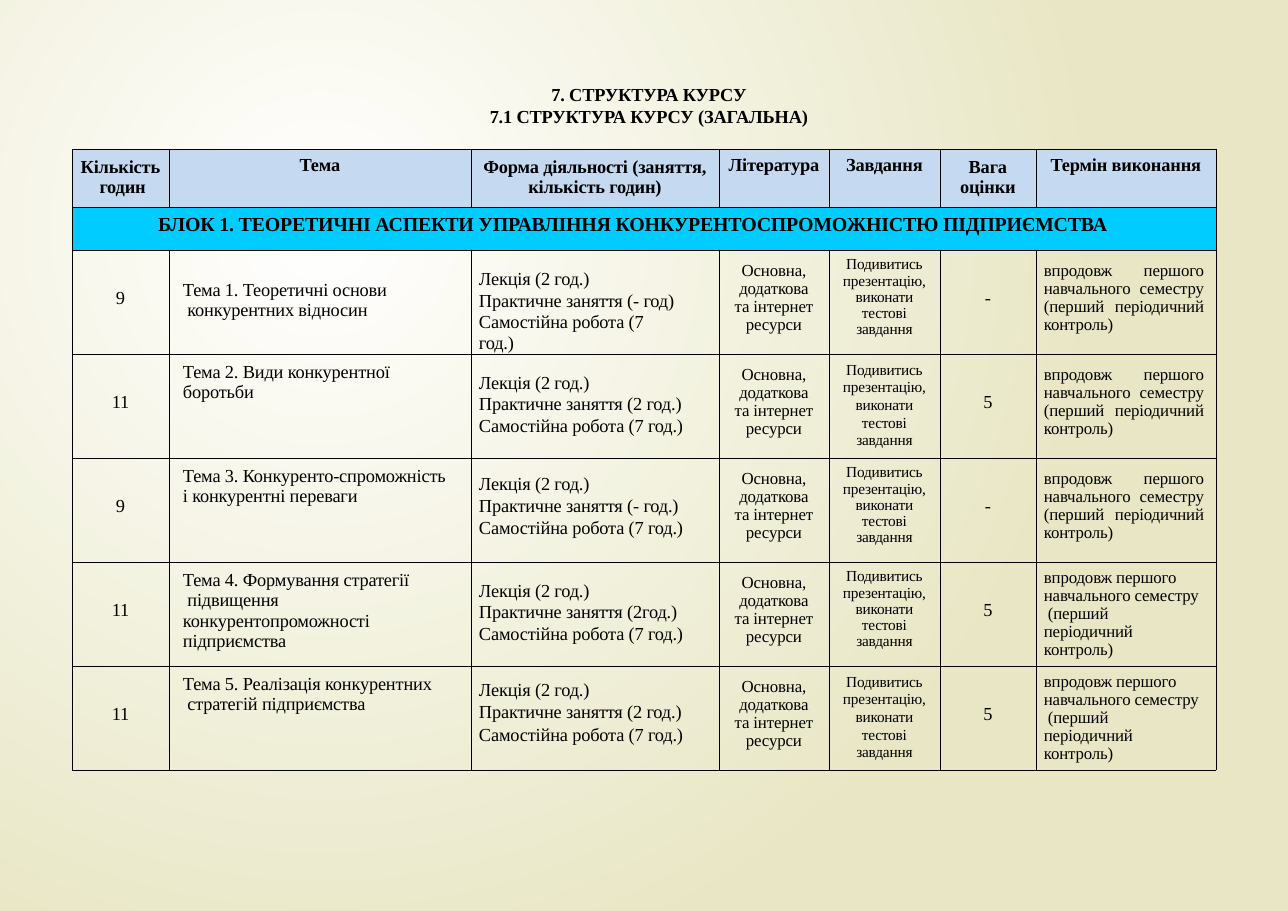
from dataclasses import dataclass

import lxml.etree
import pptx
import pptx.dml.color
import pptx.enum.text
import pptx.oxml.ns
import pptx.util

EMU_PER_PX = 8298
FONT = "Times New Roman"
BLACK, HEADER_BLUE, BLOCK_CYAN = "000000", "C5D9F0", "00CCFF"
TRACKING = -10  # hundredths of a point
LEFT = pptx.enum.text.PP_ALIGN.LEFT
CENTER = pptx.enum.text.PP_ALIGN.CENTER
JUSTIFY = pptx.enum.text.PP_ALIGN.JUSTIFY

COLUMN_WIDTHS = [97, 302, 248, 110, 111, 96, 180]
ROW_HEIGHTS = [58, 43] + [104] * 5


@dataclass(frozen=True)
class TextStyle:
    size: int = 12
    bold: bool = False
    align: pptx.enum.text.PP_ALIGN = CENTER
    line_points: float = 0
    line_factor: float = 1.0


@dataclass(frozen=True)
class CellText:
    text: str
    top: int
    style: TextStyle = TextStyle()
    left: int = 0
    right: int = 0
    fill: str = ""


@dataclass(frozen=True)
class Topic:
    hours: str
    title: str
    practice: str
    weight: str
    title_top: int = 8
    lecture_top: int = 18
    lecture_line: float = 14.1
    independent: str = "Самостійна робота (7 год.)"
    loose_task: bool = False
    justified_term: bool = True


HEADERS = [
    "Кількість\v годин",
    "Тема",
    "Форма діяльності (заняття,\vкількість годин)",
    "Література",
    "Завдання",
    "Вага\vоцінки",
    "Термін виконання",
]
BLOCK_TITLE = "БЛОК 1. ТЕОРЕТИЧНІ АСПЕКТИ УПРАВЛІННЯ КОНКУРЕНТОСПРОМОЖНІСТЮ ПІДПРИЄМСТВА"
LITERATURE = "Основна,\vдодаткова\vта інтернет\vресурси"
TASK = "Подивитись\vпрезентацію,\vвиконати\vтестові\vзавдання"
TERM_JUSTIFIED = "впродовж першого навчального семестру (перший періодичний контроль)"
TERM_LEFT = "впродовж першого\vнавчального семестру\v (перший\vперіодичний\vконтроль)"

TOPICS = [
    Topic("9", "Тема 1. Теоретичні основи\v конкурентних відносин", "(- год)", "-",
          title_top=30, lecture_top=19, lecture_line=13.8,
          independent="Самостійна робота (7\vгод.)"),
    Topic("11", "Тема 2. Види конкурентної\vборотьби", "(2 год.)", "5", loose_task=True),
    Topic("9", "Тема 3. Конкуренто-спроможність\vі конкурентні переваги", "(- год.)", "-",
          lecture_top=15, lecture_line=14.4),
    Topic("11", "Тема 4. Формування стратегії\v підвищення\vконкурентопроможності\vпідприємства",
          "(2год.)", "5", justified_term=False),
    Topic("11", "Тема 5. Реалізація конкурентних\v стратегій підприємства", "(2 год.)", "5",
          lecture_top=12, lecture_line=14.7, loose_task=True, justified_term=False),
]


def px(length: int) -> pptx.util.Emu:
    return pptx.util.Emu(length * EMU_PER_PX)


def colour(value: str) -> pptx.dml.color.RGBColor:
    return pptx.dml.color.RGBColor.from_string(value)


def write_text(text_frame, text: str, style: TextStyle) -> None:
    text_frame.word_wrap = True
    text_frame.text = text
    for paragraph in text_frame.paragraphs:
        paragraph.alignment = style.align
        paragraph.line_spacing = (
            pptx.util.Pt(style.line_points) if style.line_points else style.line_factor)
        font = paragraph.font
        font.name, font.size, font.bold = FONT, pptx.util.Pt(style.size), style.bold
        font.color.rgb = colour(BLACK)
        for properties in paragraph._p.iter(pptx.oxml.ns.qn("a:defRPr")):
            properties.set("spc", str(TRACKING))


def add_borders(cell) -> None:
    qn = pptx.oxml.ns.qn
    cell_properties = cell._tc.get_or_add_tcPr()
    for position, side in enumerate(("a:lnL", "a:lnR", "a:lnT", "a:lnB")):
        line = lxml.etree.Element(qn(side), {"w": str(pptx.util.Pt(0.5))})
        fill = lxml.etree.SubElement(line, qn("a:solidFill"))
        lxml.etree.SubElement(fill, qn("a:srgbClr"), {"val": BLACK})
        cell_properties.insert(position, line)


def fill_cell(cell, content: CellText) -> None:
    cell.margin_left, cell.margin_right = px(content.left), px(content.right)
    cell.margin_top, cell.margin_bottom = px(content.top), px(0)
    write_text(cell.text_frame, content.text, content.style)
    if content.fill:
        cell.fill.solid()
        cell.fill.fore_color.rgb = colour(content.fill)
    else:
        cell.fill.background()


def header_cells() -> list[CellText]:
    return [CellText(text, 8 if "\v" in text else 6, TextStyle(bold=True), fill=HEADER_BLUE)
            for text in HEADERS]


def topic_cells(topic: Topic) -> list[CellText]:
    activities = "\n".join(
        ["Лекція (2 год.)", f"Практичне заняття {topic.practice}", topic.independent])
    task_style = TextStyle(10, line_points=11.5) if topic.loose_task else TextStyle(
        10, line_factor=0.96)
    if topic.justified_term:
        term = CellText(TERM_JUSTIFIED, 12, TextStyle(11, align=JUSTIFY, line_factor=0.96), 8, 12)
    else:
        term = CellText(TERM_LEFT, 7, TextStyle(11, align=LEFT, line_factor=0.96), 8)
    return [
        CellText(topic.hours, 38),
        CellText(topic.title, topic.title_top, TextStyle(align=LEFT), 14),
        CellText(activities, topic.lecture_top,
                 TextStyle(align=LEFT, line_points=topic.lecture_line), 8),
        CellText(LITERATURE, 12, TextStyle(11, line_factor=0.96)),
        CellText(TASK, 7, task_style),
        CellText(topic.weight, 38),
        term,
    ]


def paint_background(slide) -> None:
    qn = pptx.oxml.ns.qn
    fill = slide.background.fill
    fill.gradient()
    for stop, position, value in zip(fill.gradient_stops, (0, 1), ("FFFFFF", "E8E6C4")):
        stop.position = position
        stop.color.rgb = colour(value)
    gradient = next(slide.element.iter(qn("a:gradFill")))
    gradient.remove(gradient.find(qn("a:lin")))
    circle = lxml.etree.SubElement(gradient, qn("a:path"), {"path": "circle"})
    lxml.etree.SubElement(circle, qn("a:fillToRect"),
                          {"l": "50000", "t": "50000", "r": "100000", "b": "100000"})


def add_title(slide) -> None:
    text_frame = slide.shapes.add_textbox(px(479), px(84), px(340), px(45)).text_frame
    text_frame.margin_left = text_frame.margin_right = 0
    text_frame.margin_top = text_frame.margin_bottom = 0
    write_text(text_frame, "7. СТРУКТУРА КУРСУ\n7.1 СТРУКТУРА КУРСУ (ЗАГАЛЬНА)",
               TextStyle(bold=True, line_points=14.1))


def add_course_table(slide) -> None:
    table = slide.shapes.add_table(
        len(ROW_HEIGHTS), len(COLUMN_WIDTHS), px(72), px(149),
        px(sum(COLUMN_WIDTHS)), px(sum(ROW_HEIGHTS))).table
    table.first_row = table.horz_banding = False
    for column, width in zip(table.columns, COLUMN_WIDTHS):
        column.width = px(width)
    for row, height in zip(table.rows, ROW_HEIGHTS):
        row.height = px(height)

    # Block heading across all columns
    table.cell(1, 0).merge(table.cell(1, len(COLUMN_WIDTHS) - 1))
    block = CellText(BLOCK_TITLE, 7, TextStyle(13, bold=True, align=LEFT), 86, fill=BLOCK_CYAN)

    rows = [header_cells(), [block]] + [topic_cells(topic) for topic in TOPICS]
    for row, contents in zip(table.rows, rows):
        for cell, content in zip(row.cells, contents):
            fill_cell(cell, content)
        for cell in row.cells:
            add_borders(cell)


def main() -> None:
    presentation = pptx.Presentation()
    presentation.slide_width, presentation.slide_height = px(1288), px(911)
    slide = presentation.slides.add_slide(presentation.slide_layouts[6])
    paint_background(slide)
    add_title(slide)
    add_course_table(slide)
    presentation.save("out.pptx")


if __name__ == "__main__":
    main()
